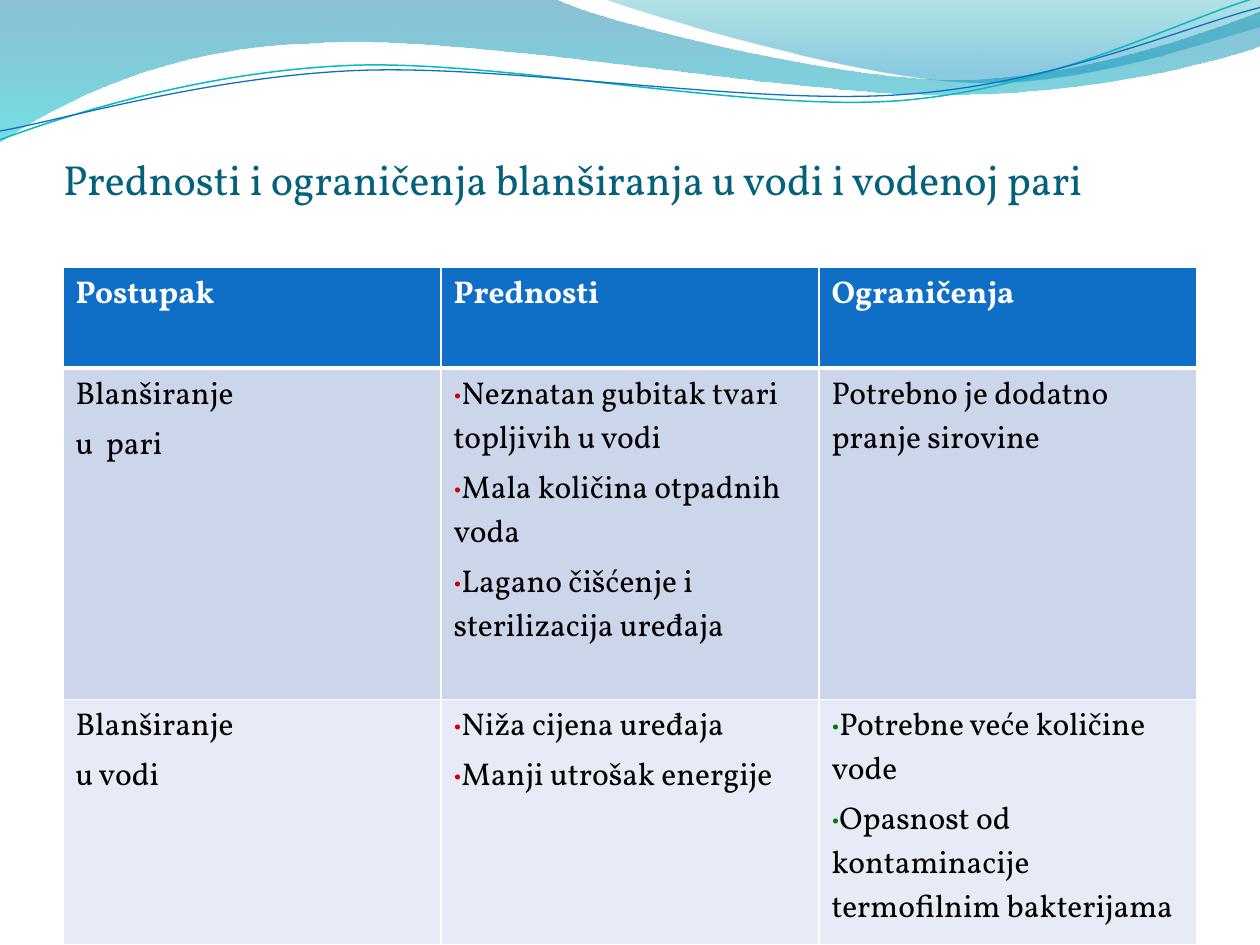
"""Builds a slide with a wave banner, a title and a table comparing blanching methods."""
from pptx import Presentation
from pptx.dml.color import RGBColor
from pptx.enum.text import MSO_ANCHOR, MSO_AUTO_SIZE, PP_ALIGN
from pptx.oxml.ns import qn
from pptx.util import Inches, Pt
from lxml import etree

LEFT = PP_ALIGN.LEFT
BOTTOM = MSO_ANCHOR.BOTTOM
NO_FIT = MSO_AUTO_SIZE.NONE
FONT = "Vollkorn"
WHITE = RGBColor(0xFF, 0xFF, 0xFF)
BLACK = RGBColor(0, 0, 0)
TITLE = RGBColor(0x04, 0x61, 0x7B)
BLUE = RGBColor(0x0F, 0x6F, 0xC6)
TEAL = RGBColor(0x0A, 0xB8, 0xBF)
RED = RGBColor(0xCC, 0, 0)
GREEN = RGBColor(0, 0x80, 0)
BAND_DARK = RGBColor(0xCC, 0xD5, 0xEA)
BAND_LIGHT = RGBColor(0xE7, 0xEB, 0xF5)
DEEP_BLUE = RGBColor(0, 0x74, 0xA1)
AQUA = RGBColor(0, 0xC6, 0xCF)
SEA = RGBColor(0, 0xA1, 0xA9)
SKY = RGBColor(0, 0x8B, 0xBF)


def add_curve(shapes, start, segments, close):
    """Draws a freeform; a segment is a line (2 numbers) or a Bezier curve (6)."""
    fb = shapes.build_freeform(Inches(start[0]), Inches(start[1]))
    points = [(Inches(seg[i]), Inches(seg[i + 1])) for seg in segments for i in range(0, len(seg), 2)]
    fb.add_line_segments(points, close)
    sp = fb.convert_to_shape()
    sp.shadow.inherit = False
    lines = iter(list(sp._element.iter(qn("a:lnTo"))))
    for seg in segments:
        line = next(lines)
        if len(seg) == 6:
            line.addprevious(etree.Element(qn("a:cubicBezTo")))
            curve = line.getprevious()
            for control in (line, next(lines), next(lines)):
                curve.append(control[0])
                control.getparent().remove(control)
    return sp


def add_border(cell, side, width):
    """Gives one side of a cell a white line."""
    ln = etree.SubElement(cell._tc.get_or_add_tcPr(), qn(f"a:{side}"), w=str(Pt(width)))
    fill = etree.SubElement(ln, qn("a:solidFill"))
    etree.SubElement(fill, qn("a:srgbClr"), val=str(WHITE))


prs = Presentation()
prs.slide_width, prs.slide_height = Inches(10), Inches(7.5)
s = prs.slides.add_slide(prs.slide_layouts[5])

waves = [
    ((0, 0),
     [(4.4, -0.01), (4.76, 0.17, 6.64, 0.63, 7.58, 0.63), (8.53, 0.63, 9.58, 0.26, 10, 0.09),
      (10.01, 0.36), (9.83, 0.44, 8.7, 0.76, 7.46, 0.75), (6.22, 0.75, 3.82, 0.28, 2.57, 0.34),
      (1.29, 0.36, 0.46, 0.83, -0.01, 1.13)],
     [(0, DEEP_BLUE, 45), (1, AQUA, 55)]),
    ((4.79, -0.01),
     [(5.09, 0.11, 6.82, 0.62, 7.69, 0.65), (8.56, 0.69, 9.61, 0.32, 10, 0.21), (10, 0)],
     [(0, SEA, 30), (0.8, SKY, 45)]),
]
for start, segments, stops in waves:
    sp = add_curve(s.shapes, start, segments, True)
    sp.line.fill.background()
    sp.fill.gradient()
    sp.fill.gradient_angle = 270
    for stop, (position, color, opacity) in zip(sp.fill.gradient_stops, stops):
        stop.position = position
        stop.color.rgb = color
    for clr, (position, color, opacity) in zip(sp._element.iter(qn("a:srgbClr")), stops):
        etree.SubElement(clr, qn("a:alpha"), val=str(opacity * 1000))

strands = [
    ((0, 1.11),
     [(0.48, 0.93, 1.58, 0.57, 2.77, 0.52), (3.95, 0.47, 5.93, 0.89, 7.13, 0.8),
      (8.33, 0.71, 9.38, 0.15, 9.98, -0.02)], TEAL, 0.85),
    ((0, 1.04),
     [(0.47, 0.96, 1.64, 0.61, 2.83, 0.56), (4.03, 0.51, 5.97, 0.84, 7.17, 0.75),
      (8.36, 0.67, 9.41, 0.21, 10, 0.06)], BLUE, 0.75),
]
for start, segments, color, width in strands:
    sp = add_curve(s.shapes, start, segments, False)
    sp.fill.background()
    sp.line.color.rgb = color
    sp.line.width = Pt(width)

title = s.shapes.title
s.shapes._spTree.append(title._element)
title.left, title.top, title.width, title.height = Inches(0.5), Inches(0.77), Inches(9), Inches(0.85)
tf = title.text_frame
tf.auto_size = NO_FIT
tf.vertical_anchor = BOTTOM
tf.margin_left = tf.margin_right = tf.margin_bottom = 0
tf.margin_top = Inches(0.05)
p = tf.paragraphs[0]
p.alignment = LEFT
r = p.add_run()
r.text = "Prednosti i ograničenja blanširanja u vodi i vodenoj pari"
r.font.name, r.font.size, r.font.color.rgb = FONT, Pt(24), TITLE

rows = [
    (0.8, BLUE, [(["Postupak"], None), (["Prednosti"], None), (["Ograničenja"], None)]),
    (2.63, BAND_DARK, [
        (["Blanširanje", "u  pari"], None),
        (["Neznatan gubitak tvari topljivih u vodi", "Mala količina otpadnih voda",
          "Lagano čišćenje i sterilizacija uređaja"], RED),
        (["Potrebno je dodatno pranje sirovine"], None)]),
    (1.95, BAND_LIGHT, [
        (["Blanširanje", "u vodi"], None),
        (["Niža cijena uređaja", "Manji utrošak energije"], RED),
        (["Potrebne veće količine vode",
          "Opasnost od kontaminacije termofilnim bakterijama"], GREEN)]),
]
height = sum(row[0] for row in rows)
table = s.shapes.add_table(3, 3, Inches(0.5), Inches(2.12), Inches(9), Inches(height)).table
for i, (row_height, fill, cells) in enumerate(rows):
    table.rows[i].height = Inches(row_height)
    for j, (lines, bullet) in enumerate(cells):
        cell = table.cell(i, j)
        for side in ("lnL", "lnR", "lnT", "lnB"):
            heavy = (i, side) in ((0, "lnB"), (1, "lnT"))
            add_border(cell, side, 3 if heavy else 1)
        cell.fill.solid()
        cell.fill.fore_color.rgb = fill
        tf = cell.text_frame
        for k, line in enumerate(lines):
            p = tf.add_paragraph() if k else tf.paragraphs[0]
            p.space_before = Pt(3.6 if k else 0)
            r = p.add_run()
            r.text = line
            r.font.name, r.font.size, r.font.bold = FONT, Pt(18), i == 0
            r.font.color.rgb = BLACK if i else WHITE
            if bullet is not None:
                pPr = p._p.get_or_add_pPr()
                clr = etree.SubElement(pPr, qn("a:buClr"))
                etree.SubElement(clr, qn("a:srgbClr"), val=str(bullet))
                etree.SubElement(pPr, qn("a:buSzPct"), val="75000")
                etree.SubElement(pPr, qn("a:buFont"), typeface=FONT)
                etree.SubElement(pPr, qn("a:buChar"), char="•")

prs.save("out.pptx")
